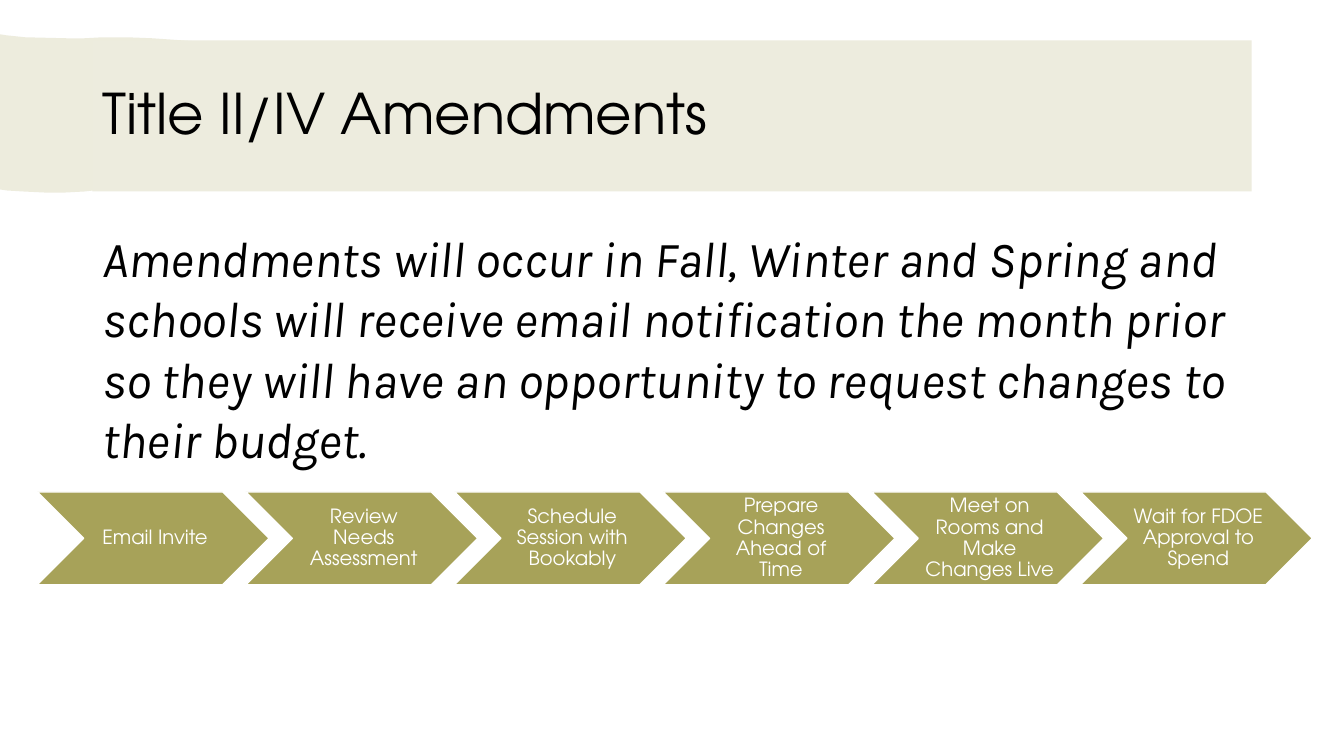
from pptx import Presentation
from pptx.dml.color import RGBColor as Rgb
from pptx.enum.shapes import MSO_SHAPE as Preset
from pptx.enum.text import MSO_ANCHOR as Anchor, MSO_AUTO_SIZE as AutoSize, PP_ALIGN as Align
from pptx.oxml.ns import qn
from pptx.oxml.xmlchemy import OxmlElement
from pptx.util import Pt

TITLE = "Title II/IV Amendments"
BODY = (
    "Amendments will occur in Fall, Winter and Spring and schools will receive "
    "email notification the month prior so they will have an opportunity to "
    "request changes to their budget."
)
STEPS = [
    "Email Invite",
    "Review Needs Assessment",
    "Schedule Session with Bookably",
    "Prepare Changes Ahead of Time",
    "Meet on Rooms and Make Changes Live",
    "Wait for FDOE Approval to Spend",
]
# Brush stroke outline, in units of BRUSH_UNIT points
BRUSH_UNIT = 0.72
BRUSH = [
    (0, 34), (6, 35), (25, 37), (66, 38), (84, 38.3), (102, 37), (126, 36.7),
    (151, 38), (194, 41), (248, 41), (280, 47), (271, 49), (255, 54), (253, 57),
    (262, 62), (238, 66), (256, 70), (275, 74), (251, 75), (273, 81), (288, 83),
    (290, 85), (284, 88), (263, 88), (330, 94), (321, 97), (318, 106), (307, 111),
    (283, 116), (280, 120), (274, 128), (308, 128), (269, 138), (273, 142),
    (252, 148), (263, 148), (197, 172), (102, 188), (84, 190), (65, 191),
    (44, 191.3), (23, 190), (7, 189), (0, 188),
]

THEME = {
    "olive": Rgb.from_string("A7A259"),
    "band": Rgb.from_string("EDECDE"),
    "black": Rgb.from_string("000000"),
    "white": Rgb.from_string("FFFFFF"),
    "brush_alpha": 20,
    "heading_font": "TeX Gyre Adventor",
    "body_font": "Karla",
    "title_size": Pt(40),
    "body_size": Pt(36),
    "step_size": Pt(14),
}
TITLE_FONT = {"name": THEME["heading_font"], "size": THEME["title_size"]}
BODY_FONT = {"name": THEME["body_font"], "size": THEME["body_size"], "italic": True}
STEP_FONT = {"name": THEME["heading_font"], "size": THEME["step_size"]}

SLIDE_SIZE = (960, 540)
TITLE_BOX = (66, 28.8, 828, 108)
BODY_BOX = (66, 158.4, 828, 327.6)
STEP_LEFT, STEP_TOP, STEP_HEIGHT = 26.64, 351.4, 66.24
STEP_WIDTH = STEP_HEIGHT * 2.5
STEP_PITCH = STEP_WIDTH * 0.9


def set_attributes(target, values):
    for name, value in values.items():
        setattr(target, name, value)


def place(shape, box):
    set_attributes(shape, dict(zip(("left", "top", "width", "height"), map(Pt, box))))


def write(shape, text, font, color, frame_format, paragraph_format):
    frame = shape.text_frame
    frame.text = text
    set_attributes(frame, {"word_wrap": True, "auto_size": AutoSize.NONE, **frame_format})
    paragraph = frame.paragraphs[0]
    set_attributes(paragraph, paragraph_format)
    run = paragraph.runs[0]
    set_attributes(run.font, font)
    run.font.color.rgb = color
    return paragraph


def paint(shape, color):
    shape.shadow.inherit = False
    shape.fill.solid()
    shape.fill.fore_color.rgb = color


def add_brush(slide):
    """Draw the translucent brush stroke behind every other shape."""
    builder = slide.shapes.build_freeform(*BRUSH[0], scale=Pt(BRUSH_UNIT))
    builder.add_line_segments(BRUSH[1:], close=True)
    brush = builder.convert_to_shape()
    paint(brush, THEME["olive"])
    brush.line.fill.background()
    alpha = OxmlElement("a:alpha")
    alpha.set("val", str(THEME["brush_alpha"] * 1000))
    brush.element.spPr.find(".//" + qn("a:srgbClr")).append(alpha)
    slide.shapes.element.insert(2, brush.element)


def add_title(slide):
    title = slide.shapes.title
    place(title, TITLE_BOX)
    title.fill.solid()
    title.fill.fore_color.rgb = THEME["band"]
    write(title, TITLE, TITLE_FONT, THEME["black"],
          {"vertical_anchor": Anchor.MIDDLE},
          {"alignment": Align.LEFT, "line_spacing": 0.9})


def add_body(slide):
    body = slide.placeholders[1]
    place(body, BODY_BOX)
    paragraph = write(body, BODY, BODY_FONT, THEME["black"],
                      {"vertical_anchor": Anchor.TOP},
                      {"alignment": Align.LEFT, "space_before": Pt(0)})
    properties = paragraph._p.get_or_add_pPr()
    properties.set("marL", "0")
    properties.set("indent", "0")
    properties.append(OxmlElement("a:buNone"))


def add_steps(slide):
    group = slide.shapes.add_group_shape()
    for index, step in enumerate(STEPS):
        box = (STEP_LEFT + index * STEP_PITCH, STEP_TOP, STEP_WIDTH, STEP_HEIGHT)
        chevron = group.shapes.add_shape(Preset.CHEVRON, *map(Pt, box))
        paint(chevron, THEME["olive"])
        chevron.line.color.rgb = THEME["white"]
        chevron.line.width = Pt(1)
        write(chevron, step, STEP_FONT, THEME["white"],
              {"vertical_anchor": Anchor.MIDDLE, "margin_left": Pt(4.2),
               "margin_right": Pt(1.4), "margin_top": Pt(1.4), "margin_bottom": Pt(1.4)},
              {"alignment": Align.CENTER, "line_spacing": 0.9})


def main():
    presentation = Presentation()
    presentation.slide_width, presentation.slide_height = map(Pt, SLIDE_SIZE)
    slide = presentation.slides.add_slide(presentation.slide_layouts[1])
    add_brush(slide)
    add_title(slide)
    add_body(slide)
    add_steps(slide)
    presentation.save("out.pptx")


if __name__ == "__main__":
    main()
